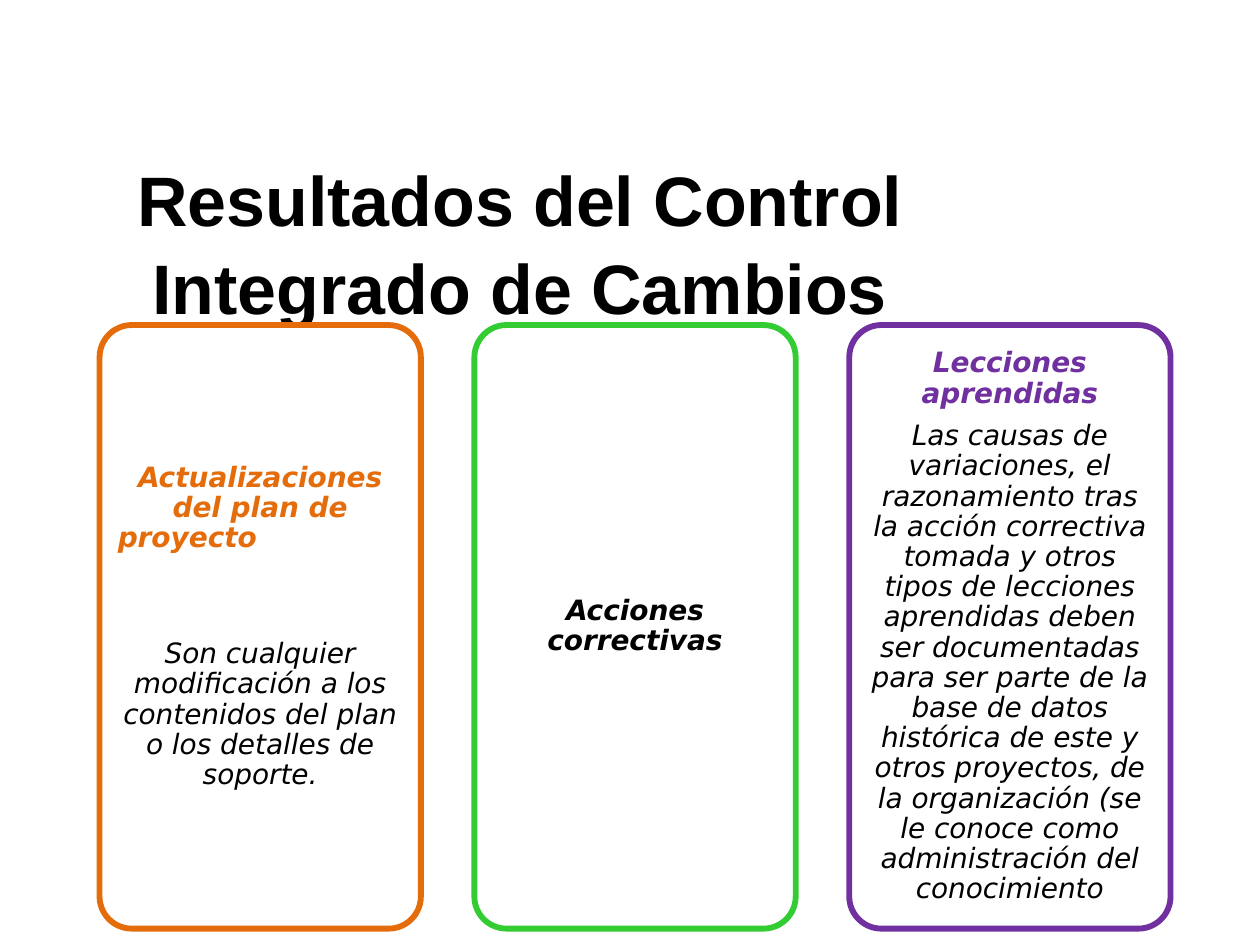
from dataclasses import dataclass

from pptx import Presentation
from pptx.dml.color import RGBColor
from pptx.enum import shapes, text
from pptx.util import Inches, Pt

BLACK = RGBColor(0x00, 0x00, 0x00)
WHITE = RGBColor(0xFF, 0xFF, 0xFF)
ORANGE = RGBColor(0xE4, 0x6C, 0x0A)
GREEN = RGBColor(0x33, 0xCC, 0x33)
PURPLE = RGBColor(0x70, 0x30, 0xA0)

CENTER, LEFT = text.PP_ALIGN.CENTER, text.PP_ALIGN.LEFT
CARD_LEFT, CARD_TOP, CARD_W, CARD_H = 0.79, 2.58, 2.55, 4.79
CARD_STEP = 2.975
CARD_INSET = 0.07


@dataclass
class Para:
    content: str
    color: RGBColor = BLACK
    bold: bool = False
    align: text.PP_ALIGN = CENTER
    after: float = 7


@dataclass
class Card:
    outline: RGBColor
    paras: list[Para]


CARDS = [
    Card(ORANGE, [
        Para("Actualizaciones del plan de", ORANGE, True, after=0),
        Para("proyecto", ORANGE, True, LEFT, after=49),
        Para("Son cualquier modificación a los contenidos del plan o los "
             "detalles de soporte."),
    ]),
    Card(GREEN, [Para("Acciones correctivas", bold=True)]),
    Card(PURPLE, [
        Para("Lecciones aprendidas", PURPLE, True),
        Para("Las causas de variaciones, el razonamiento tras la acción "
             "correctiva tomada y otros tipos de lecciones aprendidas deben "
             "ser documentadas para ser parte de la base de datos histórica "
             "de este y otros proyectos, de la organización (se le conoce "
             "como administración del conocimiento"),
    ]),
]


def apply(target, values: dict) -> None:
    for name, value in values.items():
        setattr(target, name, value)


def set_font(font, color: RGBColor, **values) -> None:
    apply(font, values)
    font.color.rgb = color


def add_title(s, content: str) -> None:
    sp = s.shapes.title
    apply(sp, {"left": Inches(0.2), "top": Inches(1.32),
               "width": Inches(7.85), "height": Inches(1.17)})
    tf = sp.text_frame
    tf.text = content
    apply(tf, {"word_wrap": True, "auto_size": text.MSO_AUTO_SIZE.NONE,
               "vertical_anchor": text.MSO_ANCHOR.MIDDLE})
    p = tf.paragraphs[0]
    apply(p, {"alignment": CENTER, "line_spacing": 1.05})
    set_font(p.runs[0].font, BLACK, name="Arial", size=Pt(40), bold=True)


def add_card(s, card: Card, left: float) -> None:
    sp = s.shapes.add_shape(
        shapes.MSO_SHAPE.ROUNDED_RECTANGLE,
        Inches(left), Inches(CARD_TOP), Inches(CARD_W), Inches(CARD_H))
    sp.adjustments[0] = 0.1
    sp.shadow.inherit = False
    sp.fill.solid()
    sp.fill.fore_color.rgb = WHITE
    sp.line.color.rgb = card.outline
    sp.line.width = Pt(3.35)

    tf = sp.text_frame
    apply(tf, {"word_wrap": True, "vertical_anchor": text.MSO_ANCHOR.MIDDLE})
    apply(tf, {f"margin_{side}": Inches(CARD_INSET)
               for side in ("left", "top", "right", "bottom")})
    for i, para in enumerate(card.paras):
        p = tf.add_paragraph() if i else tf.paragraphs[0]
        apply(p, {"alignment": para.align, "line_spacing": 0.9,
                  "space_after": Pt(para.after)})
        r = p.add_run()
        r.text = para.content
        set_font(r.font, para.color, name="DejaVu Sans", size=Pt(16),
                 bold=para.bold, italic=True)


def main() -> None:
    prs = Presentation()
    prs.slide_width, prs.slide_height = Inches(10), Inches(7.5)
    s = prs.slides.add_slide(prs.slide_layouts[5])  # title only

    # Title
    add_title(s, "Resultados del Control Integrado de Cambios")

    # Three equally spaced cards
    for i, card in enumerate(CARDS):
        add_card(s, card, CARD_LEFT + i * CARD_STEP)

    prs.save("out.pptx")


if __name__ == "__main__":
    main()
